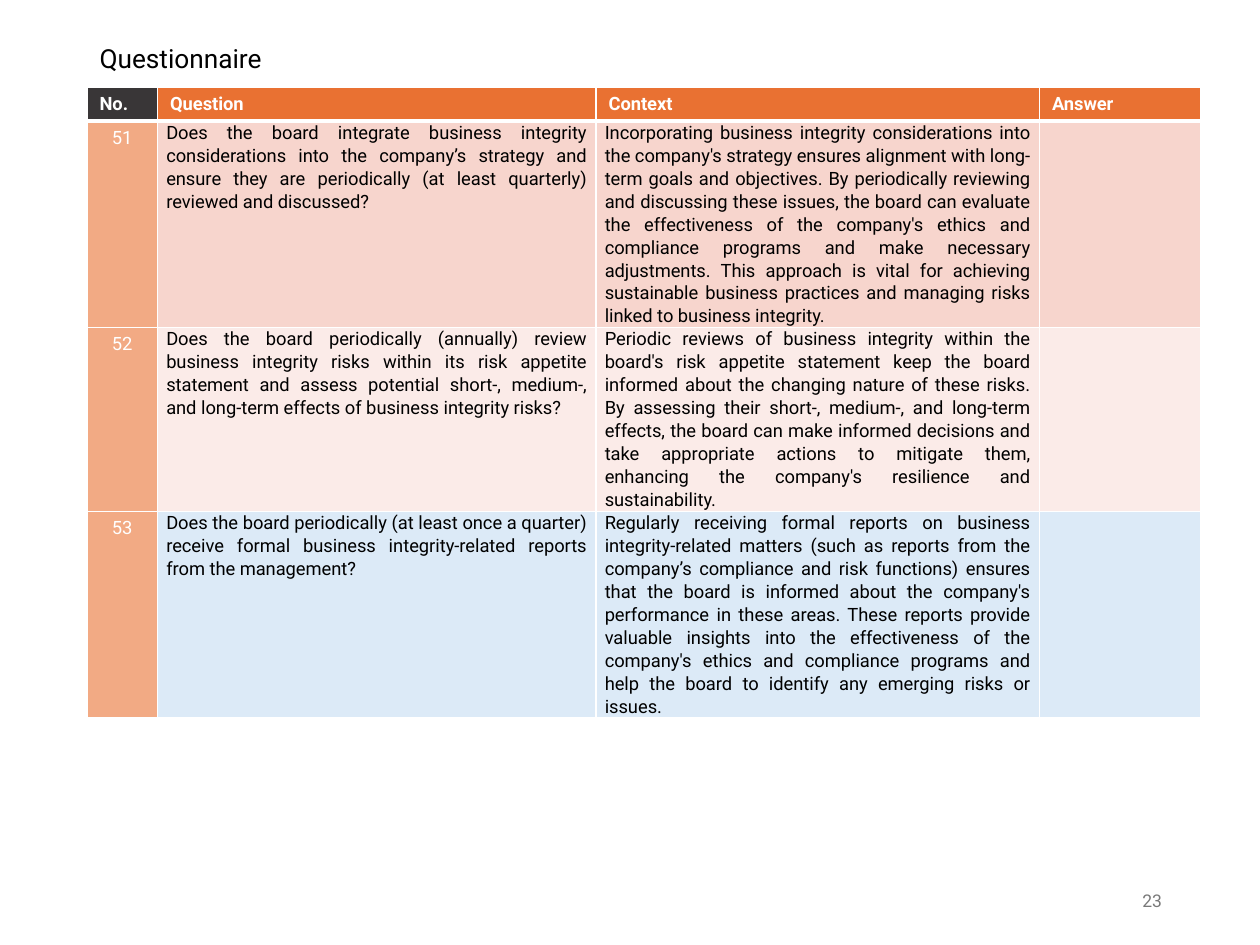
from dataclasses import dataclass

from lxml import etree
from pptx import Presentation
from pptx.dml.color import RGBColor
from pptx.enum.text import MSO_ANCHOR, PP_ALIGN
from pptx.oxml.ns import qn
from pptx.util import Inches, Pt

LEFT, CENTER, RIGHT, JUSTIFY = PP_ALIGN.LEFT, PP_ALIGN.CENTER, PP_ALIGN.RIGHT, PP_ALIGN.JUSTIFY
MIDDLE, TOP = MSO_ANCHOR.MIDDLE, MSO_ANCHOR.TOP
TITLE_ONLY = 5


@dataclass(frozen=True)
class Theme:
    """Colours, font and type sizes of the questionnaire."""
    font: str = "Roboto"
    title_size: float = 15
    table_size: float = 10.5
    page_size: float = 10
    black: str = "000000"
    white: str = "FFFFFF"
    grey: str = "797979"
    charcoal: str = "393637"
    orange: str = "E97132"
    light_orange: str = "F2AA84"
    rose: str = "F7D5CD"
    pale_rose: str = "FBEBE8"
    pale_blue: str = "DCEAF7"
    rule: float = 1
    header_rule: float = 3


THEME = Theme()
HEADINGS = ["No.", "Question", "Context", "Answer"]
COLUMN_WIDTHS = [0.56, 3.48, 3.52, 1.28]
ROW_HEIGHTS = [0.27, 1.63, 1.46, 1.63]
QUESTIONS = [
    ("51",
     "Does the board integrate business integrity considerations into the company’s strategy "
     "and ensure they are periodically (at least quarterly) reviewed and discussed?",
     "Incorporating business integrity considerations into the company's strategy ensures "
     "alignment with long-term goals and objectives. By periodically reviewing and discussing "
     "these issues, the board can evaluate the effectiveness of the company's ethics and "
     "compliance programs and make necessary adjustments. This approach is vital for achieving "
     "sustainable business practices and managing risks linked to business integrity.",
     THEME.rose),
    ("52",
     "Does the board periodically (annually) review business integrity risks within its risk "
     "appetite statement and assess potential short-, medium-, and long-term effects of "
     "business integrity risks?",
     "Periodic reviews of business integrity within the board's risk appetite statement keep "
     "the board informed about the changing nature of these risks. By assessing their short-, "
     "medium-, and long-term effects, the board can make informed decisions and take "
     "appropriate actions to mitigate them, enhancing the company's resilience and "
     "sustainability.",
     THEME.pale_rose),
    ("53",
     "Does the board periodically (at least once a quarter) receive formal business "
     "integrity-related reports from the management?",
     "Regularly receiving formal reports on business integrity-related matters (such as "
     "reports from the company’s compliance and risk functions) ensures that the board is "
     "informed about the company's performance in these areas. These reports provide valuable "
     "insights into the effectiveness of the company's ethics and compliance programs and help "
     "the board to identify any emerging risks or issues.",
     THEME.pale_blue),
]


def write(frame, text, *, size, color, align=LEFT, bold=False, line=1.0, after=0):
    """Put one formatted paragraph into a text frame."""
    paragraph = frame.paragraphs[0]
    paragraph.alignment = align
    paragraph.line_spacing = line
    paragraph.space_before = Pt(0)
    paragraph.space_after = Pt(after)
    run = paragraph.add_run()
    run.text = text
    run.font.name = THEME.font
    run.font.size = Pt(size)
    run.font.bold = bold
    run.font.color.rgb = RGBColor.from_string(color)


def draw_borders(cell, color, top, bottom):
    """Draw the four borders of a table cell."""
    properties = cell._tc.get_or_add_tcPr()
    widths = {"a:lnL": THEME.rule, "a:lnR": THEME.rule, "a:lnT": top, "a:lnB": bottom}
    for index, (tag, width) in enumerate(widths.items()):
        border = etree.Element(qn(tag), w=str(Pt(width)))
        fill = etree.SubElement(border, qn("a:solidFill"))
        etree.SubElement(fill, qn("a:srgbClr"), val=color)
        properties.insert(index, border)


class SlideBuilder:
    """Holds the theme and the current slide."""

    def __init__(self, slide, theme):
        self.slide = slide
        self.theme = theme

    def title(self, text, left, top, width, height):
        """Place and format the slide title."""
        heading = self.slide.shapes.title
        heading.left, heading.top = Inches(left), Inches(top)
        heading.width, heading.height = Inches(width), Inches(height)
        heading.text_frame.vertical_anchor = MIDDLE
        write(heading.text_frame, text, size=self.theme.title_size,
              color=self.theme.black, line=0.9)

    def page_number(self, text, left, top, width, height):
        """Add the page number."""
        box = self.slide.shapes.add_textbox(
            Inches(left), Inches(top), Inches(width), Inches(height))
        box.text_frame.word_wrap = True
        box.text_frame.vertical_anchor = MIDDLE
        write(box.text_frame, text, size=self.theme.page_size,
              color=self.theme.grey, align=RIGHT)

    def cell(self, cell, text, fill, *, header_above=False, header=False, inset=None, **style):
        """Fill, border and write one table cell."""
        theme = self.theme
        cell.fill.solid()
        cell.fill.fore_color.rgb = RGBColor.from_string(fill)
        cell.vertical_anchor = TOP
        draw_borders(cell, theme.white,
                     top=theme.header_rule if header_above else theme.rule,
                     bottom=theme.header_rule if header else theme.rule)
        if inset:
            cell.margin_left = cell.margin_right = Inches(inset)
            cell.margin_top = cell.margin_bottom = 0
        if text:
            write(cell.text_frame, text, size=theme.table_size, **style)

    def questionnaire(self, headings, questions, left, top):
        """Add the table of questions."""
        theme = self.theme
        table = self.slide.shapes.add_table(
            len(questions) + 1, len(headings), Inches(left), Inches(top),
            Inches(sum(COLUMN_WIDTHS)), Inches(sum(ROW_HEIGHTS))).table
        for column, width in zip(table.columns, COLUMN_WIDTHS):
            column.width = Inches(width)
        for row, height in zip(table.rows, ROW_HEIGHTS):
            row.height = Inches(height)
        for column, heading in enumerate(headings):
            self.cell(table.cell(0, column), heading,
                      theme.orange if column else theme.charcoal,
                      header=True, color=theme.white, bold=True)
        for row, (number, question, context, tint) in enumerate(questions, start=1):
            first = row == 1
            self.cell(table.cell(row, 0), number, theme.light_orange,
                      header_above=first, color=theme.white, align=CENTER)
            for column, text in enumerate((question, context), start=1):
                self.cell(table.cell(row, column), text, tint, header_above=first, inset=0.07,
                          color=theme.black, align=JUSTIFY, line=1.07, after=2)
            self.cell(table.cell(row, 3), "", tint, header_above=first)


def main():
    """Build and save the questionnaire slide."""
    deck = Presentation()
    deck.slide_width, deck.slide_height = Inches(10), Inches(7.5)
    builder = SlideBuilder(deck.slides.add_slide(deck.slide_layouts[TITLE_ONLY]), THEME)
    builder.title("Questionnaire", 0.69, 0.27, 8.62, 0.42)
    builder.questionnaire(HEADINGS, QUESTIONS, 0.69, 0.69)
    builder.page_number("23", 6.58, 6.95, 2.74, 0.4)
    deck.save("out.pptx")


if __name__ == "__main__":
    main()
